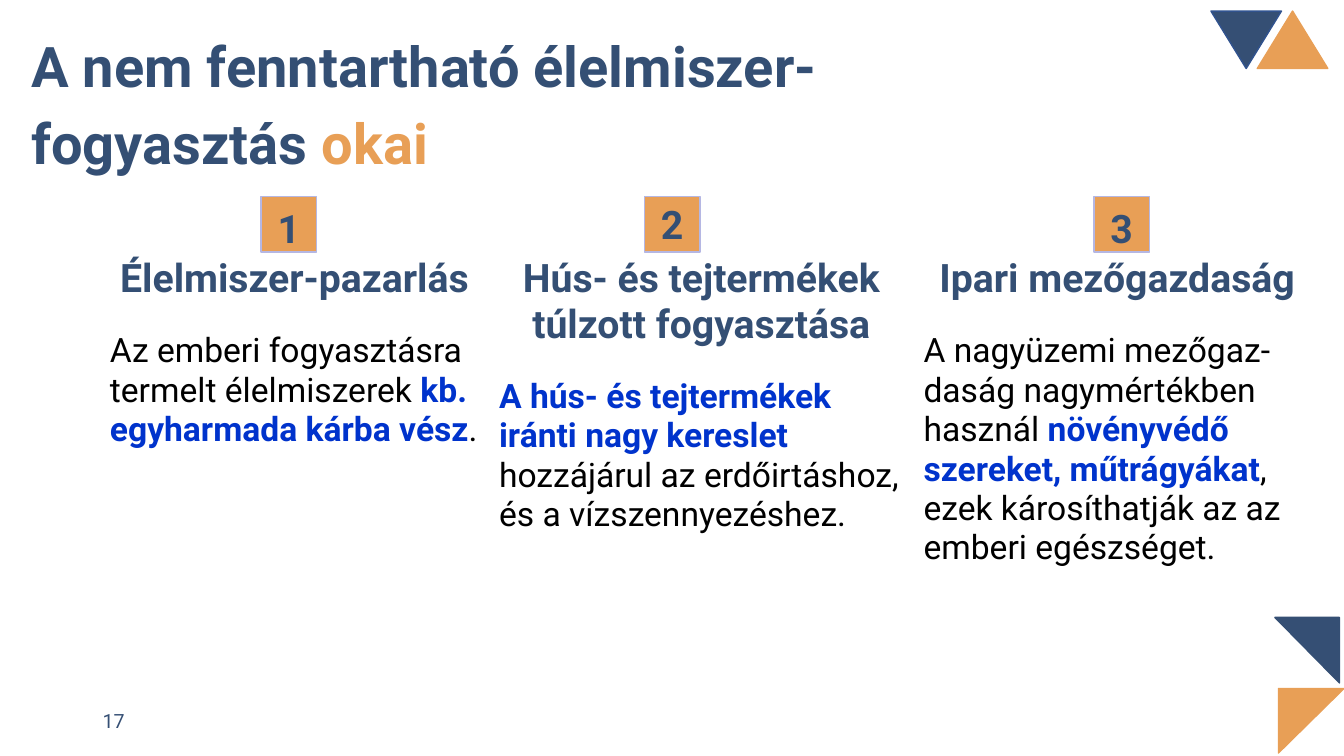
from dataclasses import dataclass

from pptx import Presentation
from pptx.dml.color import RGBColor
from pptx.enum.shapes import MSO_SHAPE
from pptx.enum.text import MSO_ANCHOR, MSO_AUTO_SIZE, PP_ALIGN
from pptx.util import Inches, Pt

TRIANGLE = MSO_SHAPE.ISOSCELES_TRIANGLE
BADGE = MSO_SHAPE.ROUNDED_RECTANGLE
TOP, MIDDLE = MSO_ANCHOR.TOP, MSO_ANCHOR.MIDDLE
LEFT, CENTER = PP_ALIGN.LEFT, PP_ALIGN.CENTER
NO_AUTOFIT = MSO_AUTO_SIZE.NONE

NAVY = RGBColor(0x34, 0x4F, 0x74)
DARK_NAVY = RGBColor(0x35, 0x4F, 0x74)
OUTLINE_BLUE = RGBColor(0x31, 0x53, 0x8F)
ORANGE = RGBColor(0xE8, 0x9F, 0x56)
LILAC = RGBColor(0xB5, 0xB7, 0xE3)
BLUE = RGBColor(0x00, 0x33, 0xCC)
BLACK = RGBColor(0, 0, 0)
FONT = "Roboto"


@dataclass
class Corner:
    left: float
    top: float
    width: float
    height: float
    rotation: int
    apex: float
    fill: RGBColor
    line: RGBColor


@dataclass
class Span:
    text: str
    strong: bool = False


@dataclass
class Cause:
    number: str
    badge_left: float
    number_inset: float
    column_width: float
    heading: str
    body: list[Span]


CORNERS = [
    Corner(12.47, 0.11, 0.7, 0.57, 0, 0.5, ORANGE, ORANGE),
    Corner(12.68, 6.83, 0.65, 0.64, 180, 1, ORANGE, ORANGE),
    Corner(12.64, 6.13, 0.65, 0.64, 270, 1, DARK_NAVY, DARK_NAVY),
    Corner(12.01, 0.11, 0.7, 0.57, 180, 0.5, DARK_NAVY, OUTLINE_BLUE),
]

CAUSES = [
    Cause("1", 2.59, 0.09, 3.86, "Élelmiszer-pazarlás", [
        Span("Az emberi fogyasztásra termelt élelmiszerek "),
        Span("kb. egyharmada kárba vész", True),
        Span("."),
    ]),
    Cause("2", 6.39, 0.05, 4.21, "Hús- és tejtermékek túlzott fogyasztása", [
        Span("A hús- és tejtermékek iránti nagy kereslet ", True),
        Span("hozzájárul az erdőirtáshoz, és a vízszennyezéshez."),
    ]),
    Cause("3", 10.85, 0.09, 4.04, "Ipari mezőgazdaság", [
        Span("A nagyüzemi mezőgaz-daság nagymértékben használ "),
        Span("növényvédő szereket, műtrágyákat", True),
        Span(", ezek károsíthatják az az emberi egészséget."),
    ]),
]

TITLE_LINES = [
    [("A nem fenntartható élelmiszer-", NAVY)],
    [("fogyasztás ", NAVY), ("okai", ORANGE)],
]


def set_font(font, size: float, color: RGBColor, bold: bool = False) -> None:
    font.name = FONT
    font.size = Pt(size)
    font.bold = bold
    font.color.rgb = color


def add_filled_shape(slide, kind, left: float, top: float, width: float, height: float,
                     fill: RGBColor, line: RGBColor, line_width: float):
    shape = slide.shapes.add_shape(
        kind, Inches(left), Inches(top), Inches(width), Inches(height))
    shape.shadow.inherit = False
    shape.fill.solid()
    shape.fill.fore_color.rgb = fill
    shape.line.color.rgb = line
    shape.line.width = Pt(line_width)
    return shape


def add_corner(slide, corner: Corner) -> None:
    triangle = add_filled_shape(slide, TRIANGLE, corner.left, corner.top, corner.width,
                                corner.height, corner.fill, corner.line, 1)
    triangle.adjustments[0] = corner.apex
    triangle.rotation = corner.rotation


def write_title(slide) -> None:
    title = slide.shapes.title
    title.left, title.top = Inches(0.21), Inches(0.17)
    title.width, title.height = Inches(10.97), Inches(0.8)
    frame = title.text_frame
    frame.auto_size = NO_AUTOFIT
    frame.word_wrap = True
    frame.vertical_anchor = TOP
    for index, pieces in enumerate(TITLE_LINES):
        paragraph = frame.add_paragraph() if index else frame.paragraphs[0]
        paragraph.alignment = LEFT
        paragraph.line_spacing = Pt(54.7)
        for text, color in pieces:
            run = paragraph.add_run()
            run.text = text
            set_font(run.font, 40, color, True)


def add_badge(slide, cause: Cause) -> None:
    badge = add_filled_shape(
        slide, BADGE, cause.badge_left, 1.95, 0.55, 0.55, ORANGE, LILAC, 1.09)
    badge.adjustments[0] = 0
    frame = badge.text_frame
    frame.vertical_anchor = TOP
    frame.margin_top = Inches(cause.number_inset)
    frame.margin_left = frame.margin_right = frame.margin_bottom = 0
    number = frame.paragraphs[0]
    number.text = cause.number
    number.alignment = CENTER
    number.line_spacing = Pt(32.8)
    set_font(number.font, 28, NAVY, True)


def fill_cell(cell, cause: Cause) -> None:
    cell.fill.background()
    heading = cell.text_frame.paragraphs[0]
    heading.text = cause.heading
    heading.alignment = CENTER
    set_font(heading.font, 28, NAVY, True)
    body = cell.text_frame.add_paragraph()
    body.space_before = Pt(21)
    for span in cause.body:
        run = body.add_run()
        run.text = span.text
        set_font(run.font, 24, BLUE if span.strong else BLACK, span.strong)


def add_causes(slide) -> None:
    table = slide.shapes.add_table(
        1, len(CAUSES), Inches(0.99), Inches(2.49), Inches(12.11), Inches(2.38)).table
    table.first_row = False
    table.horz_banding = False
    for column, cause in enumerate(CAUSES):
        table.columns[column].width = Inches(cause.column_width)
        fill_cell(table.cell(0, column), cause)
        add_badge(slide, cause)


def add_page_number(slide) -> None:
    frame = slide.shapes.add_textbox(
        Inches(0.92), Inches(6.95), Inches(3), Inches(0.4)).text_frame
    frame.word_wrap = True
    frame.vertical_anchor = MIDDLE
    page = frame.paragraphs[0]
    page.text = "17"
    set_font(page.font, 14, DARK_NAVY)


def main() -> None:
    presentation = Presentation()
    presentation.slide_width = Inches(13.33)
    presentation.slide_height = Inches(7.5)
    slide = presentation.slides.add_slide(presentation.slide_layouts[5])
    add_page_number(slide)
    for corner in CORNERS:
        add_corner(slide, corner)
    write_title(slide)
    add_causes(slide)
    presentation.save("out.pptx")


if __name__ == "__main__":
    main()
